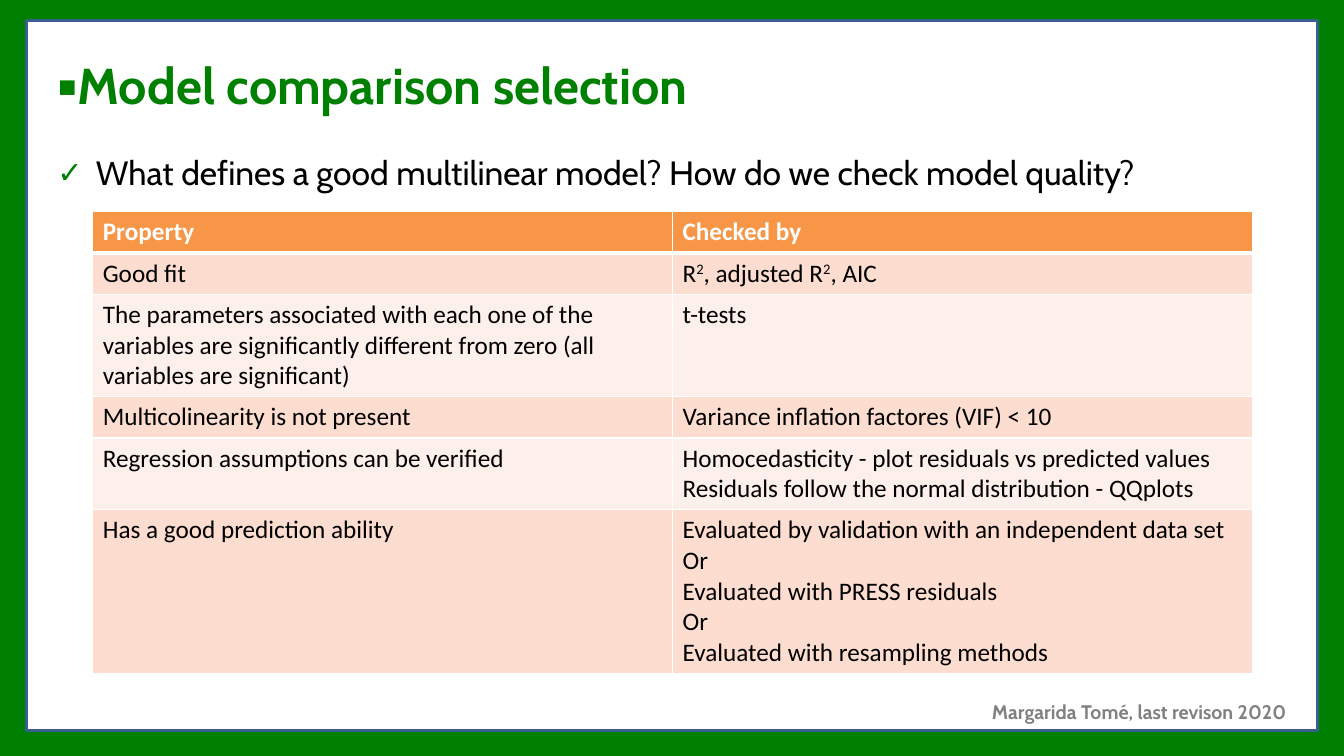
from dataclasses import dataclass

from lxml import etree
from pptx import Presentation
from pptx import util as u
from pptx.dml.color import RGBColor
from pptx.enum import shapes, text
from pptx.oxml.ns import qn


@dataclass(frozen=True)
class Theme:
    green: str = "008000"
    frame: str = "3A5F8C"
    white: str = "FFFFFF"
    black: str = "000000"
    grey: str = "808080"
    header: str = "F79646"
    bands: tuple[str, str] = ("FCDDCF", "FDEFE9")
    font: str = "Cabin"
    table_font: str = "Calibri"
    title_size: int = 36
    body_size: int = 24
    table_size: int = 18
    footer_size: int = 14


@dataclass(frozen=True)
class Panel:
    left: float
    top: float
    width: float
    height: float
    fill: str
    line: str


@dataclass(frozen=True)
class Check:
    prop: str
    checked_by: str  # "^" marks the next character as superscript
    lines: int = 1


T = Theme()
PANELS = [
    Panel(0, 0, 13.33, 7.5, T.green, T.green),
    Panel(0.26, 0.2, 12.81, 7.05, T.white, T.frame),
]
CHECKS = [
    Check("Property", "Checked by"),
    Check("Good fit", "R^2, adjusted R^2, AIC"),
    Check("The parameters associated with each one of the variables are "
          "significantly different from zero (all variables are significant)", "t-tests", 3),
    Check("Multicolinearity is not present", "Variance inflation factores (VIF) < 10"),
    Check("Regression assumptions can be verified",
          "Homocedasticity - plot residuals vs predicted values\n"
          "Residuals follow the normal distribution - QQplots", 2),
    Check("Has a good prediction ability",
          "Evaluated by validation with an independent data set\nOr\n"
          "Evaluated with PRESS residuals\nOr\nEvaluated with resampling methods", 5),
]


def rgb(color: str) -> RGBColor:
    return RGBColor.from_string(color)


def place(sp, left: float, top: float, width: float, height: float) -> None:
    sp.left, sp.top = u.Inches(left), u.Inches(top)
    sp.width, sp.height = u.Inches(width), u.Inches(height)


def write(tf, content: str, *, size: int, color: str, font: str = T.font,
          bold: bool = False, align=text.PP_ALIGN.LEFT) -> None:
    for i, line in enumerate(content.split("\n")):
        p = tf.paragraphs[0] if i == 0 else tf.add_paragraph()
        p.alignment = align
        first, *marked = line.split("^")
        pieces = [(first, False)]
        for part in marked:
            pieces += [(part[0], True), (part[1:], False)]
        for piece, raised in pieces:
            r = p.add_run()
            r.text = piece
            r.font.name, r.font.size, r.font.bold = font, u.Pt(size), bold
            r.font.color.rgb = rgb(color)
            if raised:
                r.font._element.set("baseline", "30000")


def add_bullet(p, char: str, color: str, percent: int = 100, indent: float = 0) -> None:
    pPr = p._p.get_or_add_pPr()
    pPr.set("marL", str(u.Inches(indent)))
    pPr.set("indent", str(-u.Inches(indent)))
    clr = etree.SubElement(pPr, qn("a:buClr"))
    etree.SubElement(clr, qn("a:srgbClr"), val=color)
    etree.SubElement(pPr, qn("a:buSzPct"), val=str(percent * 1000))
    etree.SubElement(pPr, qn("a:buFont"), typeface=T.font)
    etree.SubElement(pPr, qn("a:buChar"), char=char)


def add_borders(cell, bottom: int) -> None:
    tcPr = cell._tc.get_or_add_tcPr()
    for side, width in (("L", 1), ("R", 1), ("T", 1), ("B", bottom)):
        ln = etree.SubElement(tcPr, qn(f"a:ln{side}"), w=str(u.Pt(width)))
        fill = etree.SubElement(ln, qn("a:solidFill"))
        etree.SubElement(fill, qn("a:srgbClr"), val=T.white)


def add_panel(slide, panel: Panel, depth: int) -> None:
    sp = slide.shapes.add_shape(
        shapes.MSO_SHAPE.RECTANGLE, u.Inches(panel.left), u.Inches(panel.top),
        u.Inches(panel.width), u.Inches(panel.height))
    sp.shadow.inherit = False
    sp.fill.solid()
    sp.fill.fore_color.rgb = rgb(panel.fill)
    sp.line.color.rgb = rgb(panel.line)
    sp.line.width = u.Pt(2)
    # Behind the placeholders; the tree opens with two property elements
    slide.shapes._spTree.insert(2 + depth, sp._element)


def add_checks(slide, checks: list[Check]) -> None:
    heights = [0.41 + 0.3 * (check.lines - 1) for check in checks]
    table = slide.shapes.add_table(
        len(checks), 2, u.Inches(0.92), u.Inches(2.1),
        u.Inches(11.5), u.Inches(sum(heights))).table
    table.horz_banding = False
    for i, check in enumerate(checks):
        table.rows[i].height = u.Inches(heights[i])
        is_header = i == 0
        for j, content in enumerate((check.prop, check.checked_by)):
            cell = table.cell(i, j)
            add_borders(cell, bottom=3 if is_header else 1)
            cell.fill.solid()
            cell.fill.fore_color.rgb = rgb(T.header if is_header else T.bands[(i - 1) % 2])
            write(cell.text_frame, content, size=T.table_size, font=T.table_font,
                  color=T.white if is_header else T.black, bold=is_header)


def main() -> None:
    prs = Presentation()
    prs.slide_width, prs.slide_height = u.Inches(13.33), u.Inches(7.5)
    slide = prs.slides.add_slide(prs.slide_layouts[1])

    # Green border and white page
    for depth, panel in enumerate(PANELS):
        add_panel(slide, panel, depth)

    # Title
    title = slide.shapes.title
    place(title, 0.47, 0.44, 12.39, 0.79)
    tf = title.text_frame
    tf.vertical_anchor = text.MSO_ANCHOR.MIDDLE
    write(tf, "Model comparison selection", size=T.title_size, color=T.green, bold=True)
    add_bullet(tf.paragraphs[0], "▪", T.green)

    # Question
    body = slide.placeholders[1]
    place(body, 0.47, 1.46, 12.39, 5.47)
    tf = body.text_frame
    write(tf, "What defines a good multilinear model? How do we check model quality?",
          size=T.body_size, color=T.black, align=text.PP_ALIGN.JUSTIFY)
    p = tf.paragraphs[0]
    p.space_before = u.Pt(12)
    add_bullet(p, "✓", T.green, percent=90, indent=0.38)

    # Properties and their checks
    add_checks(slide, CHECKS)

    # Footer
    footer = slide.shapes.add_textbox(u.Inches(9.74), u.Inches(6.89), u.Inches(3.2), u.Inches(0.34))
    footer.text_frame.word_wrap = True
    write(footer.text_frame, "Margarida Tomé, last revison 2020",
          size=T.footer_size, color=T.grey, bold=True)

    prs.save("out.pptx")


if __name__ == "__main__":
    main()
